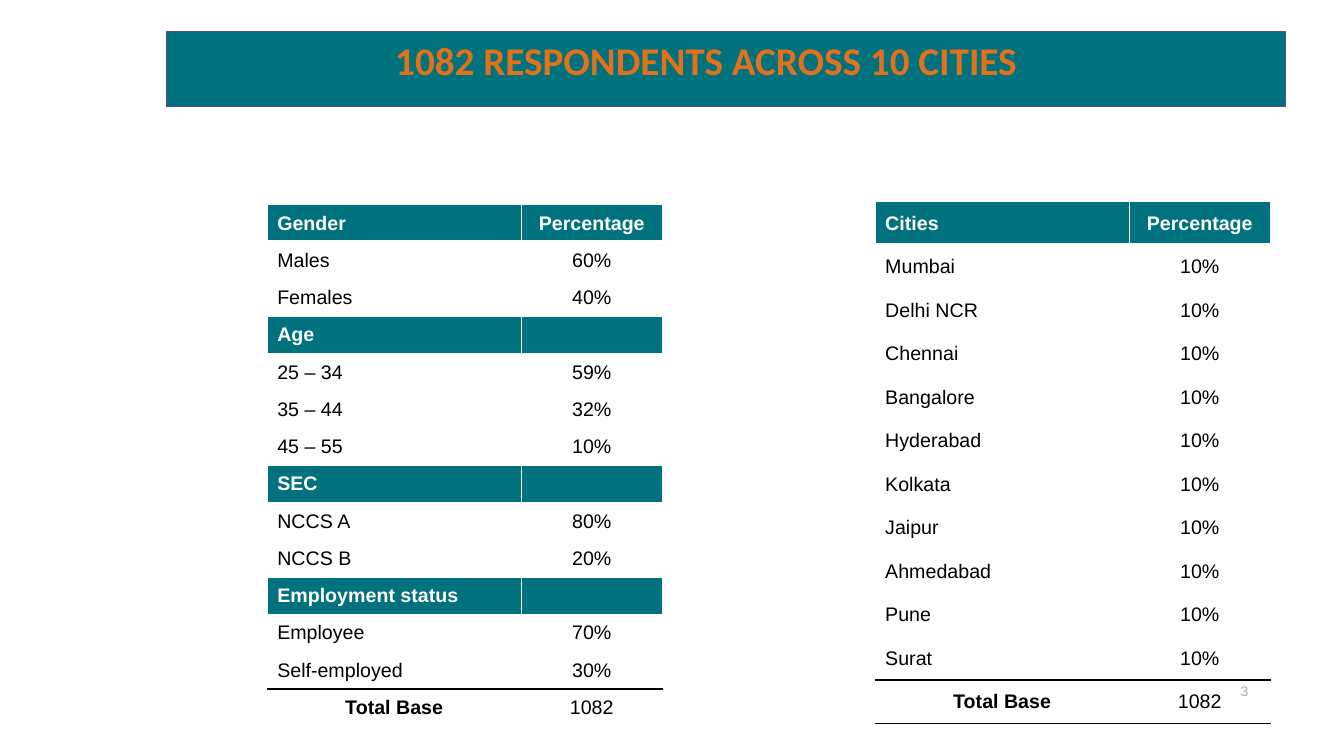
from lxml import etree
from pptx import Presentation
from pptx.dml.color import RGBColor
from pptx.enum.shapes import MSO_SHAPE
from pptx.enum.text import MSO_ANCHOR, PP_ALIGN
from pptx.oxml import parse_xml
from pptx.oxml.ns import nsdecls
from pptx.util import Inches, Pt

LEFT, CENTER, RIGHT = PP_ALIGN.LEFT, PP_ALIGN.CENTER, PP_ALIGN.RIGHT
MIDDLE = MSO_ANCHOR.MIDDLE
TEAL, WHITE, BLACK = "00727D", "FFFFFF", "000000"
ORANGE, PURPLE, GREY = "E1711B", "5C4A90", "ADABB3"


def write(frame, text, size=14, color=BLACK, bold=False, font="Arial", align=LEFT):
    frame.vertical_anchor = MIDDLE
    paragraph = frame.paragraphs[0]
    paragraph.alignment = align
    run = paragraph.add_run()
    run.text = text
    run.font.name = font
    run.font.size = Pt(size)
    run.font.bold = bold
    run.font.color.rgb = RGBColor.from_string(color)


def set_borders(cell, top, bottom, bottom_width):
    """Draw the four cell edges; the sides are always thin and white."""
    edges = [("L", WHITE, 1), ("R", WHITE, 1), ("T", top, 1), ("B", bottom, bottom_width)]
    properties = cell._tc.get_or_add_tcPr()
    for position, (side, color, width) in enumerate(edges):
        properties.insert(position, parse_xml(
            f'<a:ln{side} {nsdecls("a")} w="{Pt(width)}"><a:solidFill>'
            f'<a:srgbClr val="{color}"/></a:solidFill></a:ln{side}>'))


prs = Presentation()
prs.slide_width, prs.slide_height = Inches(13.33), Inches(7.5)
slide = prs.slides.add_slide(prs.slide_layouts[5])

page_number = slide.shapes.add_textbox(Inches(11.42), Inches(6.72), Inches(1.06), Inches(0.27))
page_number.text_frame.word_wrap = True
write(page_number.text_frame, "3", size=10, color=GREY, align=RIGHT)

# A row with None as its value is a section heading.
profile = [
    ("Gender", "Percentage"), ("Males", "60%"), ("Females", "40%"),
    ("Age", None), ("25 – 34", "59%"), ("35 – 44", "32%"), ("45 – 55", "10%"),
    ("SEC", None), ("NCCS A", "80%"), ("NCCS B", "20%"),
    ("Employment status", None), ("Employee", "70%"), ("Self-employed", "30%"),
    ("Total Base", "1082"),
]
city_names = ["Mumbai", "Delhi NCR", "Chennai", "Bangalore", "Hyderabad",
              "Kolkata", "Jaipur", "Ahmedabad", "Pune", "Surat"]
cities = [("Cities", "Percentage"), *((name, "10%") for name in city_names),
          ("Total Base", "1082")]

table_height = Inches(5.18)
for rows, left, top, closing_color in [(profile, 2.65, 2.03, WHITE), (cities, 8.68, 2, BLACK)]:
    table = slide.shapes.add_table(len(rows), 2, Inches(left), Inches(top),
                                   Inches(3.92), table_height).table
    table.first_row = table.horz_banding = False
    table.columns[0].width, table.columns[1].width = Inches(2.52), Inches(1.4)
    last = len(rows) - 1
    for r, row in enumerate(rows):
        table.rows[r].height = table_height // len(rows)
        is_heading = r == 0 or row[1] is None
        for c, text in enumerate(row):
            cell = table.cell(r, c)
            cell.margin_top = cell.margin_bottom = 0
            cell.vertical_anchor = MIDDLE
            if is_heading:
                cell.fill.solid()
                cell.fill.fore_color.rgb = RGBColor.from_string(TEAL)
            else:
                cell.fill.background()
            bottom = BLACK if r == last - 1 else closing_color if r == last else WHITE
            set_borders(cell, BLACK if r == last else WHITE, bottom, 3 if r == 0 else 1)
            if text:
                write(cell.text_frame, text, color=WHITE if is_heading else BLACK,
                      bold=is_heading or (r == last and c == 0),
                      align=CENTER if c == 1 or r == last else LEFT)

banner = slide.shapes.add_shape(MSO_SHAPE.RECTANGLE, Inches(1.65), Inches(0.31),
                                Inches(11.1), Inches(0.75))
banner.shadow.inherit = False
banner.fill.solid()
banner.fill.fore_color.rgb = RGBColor.from_string(TEAL)
banner.line.color.rgb = RGBColor.from_string(PURPLE)
banner.line.width = Pt(1)

title = slide.shapes.title
title.left, title.top = Inches(3.06), Inches(0.31)
title.width, title.height = Inches(8.14), Inches(0.57)
title.text_frame.margin_left = Inches(0.86)
write(title.text_frame, "1082 RESPONDENTS ACROSS 10 CITIES", size=28, color=ORANGE,
      bold=True, font="Calibri")
banner.element.addnext(title.element)  # the title sits in front of the banner

prs.save("out.pptx")
